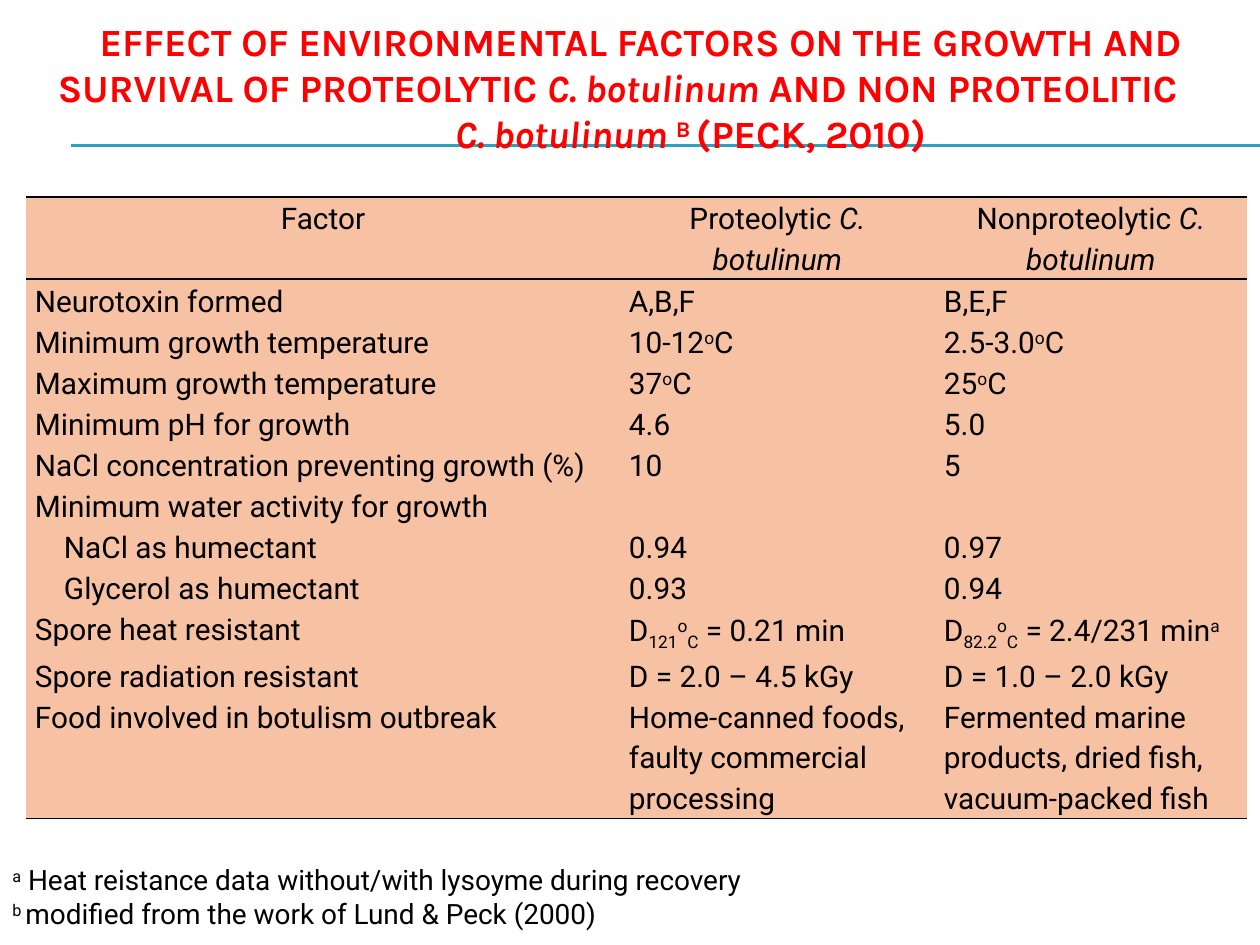
from lxml import etree
from pptx import Presentation, util as u
from pptx.dml.color import RGBColor
from pptx.enum import shapes, text
from pptx.oxml.ns import qn

BLACK, RED, TEAL, PEACH = "000000", "FF0000", "2DA2BF", "F7C1A4"
MARKS = {"*": "italic", "^": "super", "_": "sub"}
SHIFT = {"super": "30000", "sub": "-25000"}

# Each title line with its left and right indent
TITLE = [
    ("EFFECT OF ENVIRONMENTAL FACTORS ON THE GROWTH AND", 0, 0),
    ("SURVIVAL OF PROTEOLYTIC *C. botulinum* AND NON PROTEOLITIC", 0, 46),
    ("*C. botulinum *^B ^(PECK, 2010)", 100, 0),
]
# A leading ">" marks an indented factor
ROWS = [
    ("Factor", "Proteolytic *C. botulinum*", "Nonproteolytic *C. botulinum*"),
    ("Neurotoxin formed", "A,B,F", "B,E,F"),
    ("Minimum growth temperature", "10-12^o^C", "2.5-3.0^o^C"),
    ("Maximum growth temperature", "37^o^C", "25^o^C"),
    ("Minimum pH for growth", "4.6", "5.0"),
    ("NaCl concentration preventing growth (%)", "10", "5"),
    ("Minimum water activity for growth", "", ""),
    (">NaCl as humectant", "0.94", "0.97"),
    (">Glycerol as humectant", "0.93", "0.94"),
    ("Spore heat resistant", "D_121_^o^_C_ = 0.21 min",
     "D_82.2_^o^_C_ = 2.4/231 min^a^"),
    ("Spore radiation resistant", "D = 2.0 – 4.5 kGy", "D = 1.0 – 2.0 kGy"),
    ("Food involved in botulism outbreak",
     "Home-canned foods, faulty commercial processing",
     "Fermented marine products, dried fish, vacuum-packed fish"),
]
NOTES = ["^a^ Heat reistance data without/with lysoyme during recovery",
         "^b ^modified from the work of Lund & Peck (2000)"]


def px(n):
    return u.Emu(round(n * 914400 / 126))


def rgb(code):
    return RGBColor.from_string(code)


def split(line):
    """Yield (words, style) pieces of a line marked with *, ^ or _."""
    words, style = "", None
    for char in line:
        if char in MARKS:
            if words:
                yield words, style
            words, style = "", None if style else MARKS[char]
        else:
            words += char
    if words:
        yield words, style


def write(para, line, face, size, color, bold=False):
    for words, style in split(line):
        run = para.add_run()
        run.text = words
        font = run.font
        font.name, font.size, font.bold = face, u.Pt(size), bold
        font.italic = style == "italic"
        font.color.rgb = rgb(color)
        if style in SHIFT:
            font._element.set("baseline", SHIFT[style])


def lines(frame, count):
    """Return the given number of paragraphs of a new text frame."""
    return [frame.paragraphs[0]] + [frame.add_paragraph()
                                    for _ in range(count - 1)]


def rule(slide, left, top, right):
    line = slide.shapes.add_connector(
        shapes.MSO_CONNECTOR.STRAIGHT, px(left), px(top), px(right), px(top))
    line.line.color.rgb = rgb(TEAL)
    line.line.width = u.Pt(0.75)
    etree.SubElement(line._element.spPr, qn("a:effectLst"))


def title(slide, left, top, width, height):
    box = slide.shapes.add_textbox(px(left), px(top), px(width), px(height))
    frame = box.text_frame
    frame.word_wrap = True
    frame.vertical_anchor = text.MSO_ANCHOR.MIDDLE
    for para, (line, before, after) in zip(lines(frame, len(TITLE)), TITLE):
        para.alignment = text.PP_ALIGN.CENTER
        props = para._p.get_or_add_pPr()
        props.set("marL", str(px(before)))
        props.set("marR", str(px(after)))
        write(para, line, "Karla", 22, RED, bold=True)


def edge(cell, sides):
    """Draw the named sides of a cell in black and clear the others."""
    props = cell._tc.get_or_add_tcPr()
    for spot, side in enumerate("LRTB"):
        line = etree.Element(qn(f"a:ln{side}"), w=str(u.Pt(1)))
        if side in sides:
            fill = etree.SubElement(line, qn("a:solidFill"))
            etree.SubElement(fill, qn("a:srgbClr"), val=BLACK)
        else:
            etree.SubElement(line, qn("a:noFill"))
        props.insert(spot, line)


def table(slide, left, top, widths, heights):
    grid = slide.shapes.add_table(
        len(heights), len(widths), px(left), px(top),
        px(sum(widths)), px(sum(heights))).table
    grid.first_row = grid.horz_banding = False
    for col, width in zip(grid.columns, widths):
        col.width = px(width)
    for row, height in zip(grid.rows, heights):
        row.height = px(height)
    sides = {0: "TB", 1: "T", len(ROWS) - 1: "B"}
    for r, row in enumerate(ROWS):
        for c, line in enumerate(row):
            cell = grid.cell(r, c)
            cell.fill.solid()
            cell.fill.fore_color.rgb = rgb(PEACH)
            edge(cell, sides.get(r, ""))
            cell.margin_left = px(38 if line.startswith(">") else 9)
            cell.margin_right = px(9)
            cell.margin_top = cell.margin_bottom = 0
            para = cell.text_frame.paragraphs[0]
            para.line_spacing = 1.15
            if r == 0:
                para.alignment = text.PP_ALIGN.CENTER
            write(para, line.lstrip(">"), "Roboto", 17, BLACK)


def notes(slide, left, top, width, height):
    box = slide.shapes.add_textbox(px(left), px(top), px(width), px(height))
    frame = box.text_frame
    frame.word_wrap = False
    frame.auto_size = text.MSO_AUTO_SIZE.SHAPE_TO_FIT_TEXT
    frame.vertical_anchor = text.MSO_ANCHOR.MIDDLE
    for para, line in zip(lines(frame, len(NOTES)), NOTES):
        write(para, line, "Roboto", 16, BLACK)


def main():
    deck = Presentation()
    deck.slide_width, deck.slide_height = px(1260), px(945)
    slide = deck.slides.add_slide(deck.slide_layouts[6])
    # Double rule behind the title
    for top in (145, 146):
        rule(slide, 71, top, 1260)
    title(slide, 42, 29, 1197, 116)
    # Table of growth factors
    table(slide, 26, 197, [594, 315, 312], [80] + [40] * 8 + [44, 40, 114])
    # Footnotes
    notes(slide, 0, 856, 765, 81)
    deck.save("out.pptx")


if __name__ == "__main__":
    main()
